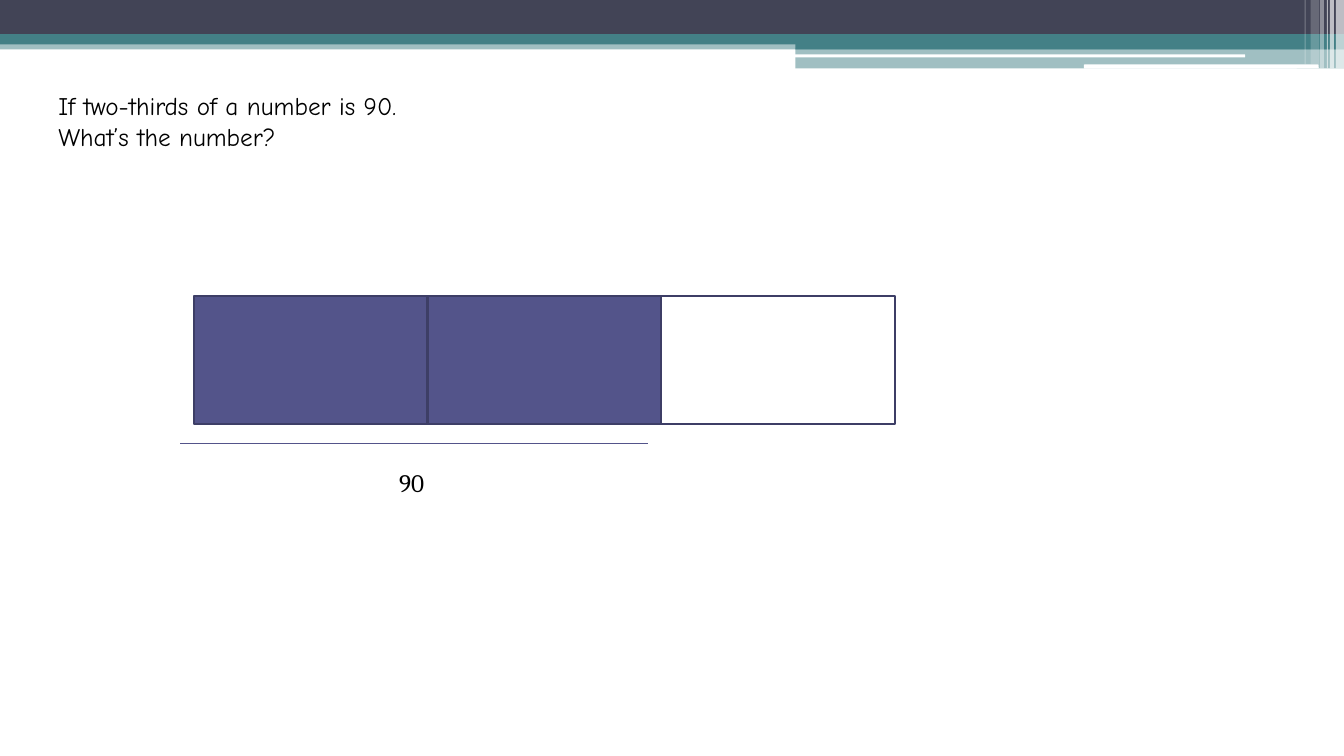
from lxml import etree
from pptx import Presentation
from pptx.dml.color import RGBColor
from pptx.enum import shapes, text
from pptx.oxml import ns
from pptx.util import Inches, Pt

COLORS = {
    "slate": "424456", "teal": "438086", "white": "FFFFFF",
    "indigo": "53548A", "outline": "3D3E66", "black": "000000",
}


def add_block(left, top, width, height, color, opacity=100, rounded=False):
    kind = shapes.MSO_SHAPE.ROUNDED_RECTANGLE if rounded else shapes.MSO_SHAPE.RECTANGLE
    shape = slide.shapes.add_shape(
        kind, Inches(left), Inches(top), Inches(width), Inches(height))
    shape.shadow.inherit = False
    shape.fill.solid()
    shape.fill.fore_color.rgb = RGBColor.from_string(COLORS[color])
    shape.line.fill.background()
    if opacity < 100:
        color_element = shape.fill._xPr.find(".//" + ns.qn("a:srgbClr"))
        etree.SubElement(color_element, ns.qn("a:alpha"), val=str(opacity * 1000))
    return shape


def add_label(left, top, width, height, lines, font_name):
    box = slide.shapes.add_textbox(
        Inches(left), Inches(top), Inches(width), Inches(height))
    frame = box.text_frame
    frame.word_wrap = True
    frame.auto_size = text.MSO_AUTO_SIZE.SHAPE_TO_FIT_TEXT
    paragraph = frame.paragraphs[0]
    for index, line in enumerate(lines):
        if index:
            paragraph.add_line_break()
        run = paragraph.add_run()
        run.text = line
        run.font.size = Pt(18)
        run.font.name = font_name
        run.font.color.rgb = RGBColor.from_string(COLORS["black"])


presentation = Presentation()
presentation.slide_width = Inches(13.33)
presentation.slide_height = Inches(7.5)
slide = presentation.slides.add_slide(presentation.slide_layouts[6])

# Header bands
for band in [
    (0, 0.4, 13.33, 0.09, "teal", 50),
    (0, 0, 13.33, 0.34, "slate"),
    (0, 0.34, 13.33, 0.1, "teal"),
    (7.89, 0.39, 5.44, 0.1, "teal"),
    (7.89, 0.48, 5.44, 0.2, "teal", 50),
]:
    add_block(*band)

# White slits in the right-hand band
for left, top, width, height in [(7.88, 0.54, 4.47, 0.03), (10.75, 0.64, 2.33, 0.04)]:
    add_block(left, top, width, height, "white", rounded=True)

# Translucent stripes at the right edge
for left, width, height, opacity in [
    (13.25, 0.08, 0.68, 65), (13.19, 0.04, 0.68, 65), (13.16, 0.01, 0.68, 60),
    (13.09, 0.04, 0.68, 40), (13, 0.08, 0.64, 20), (12.94, 0.01, 0.64, 30),
]:
    add_block(left, 0, width, height, "white", opacity)

# Question
add_label(0.48, 0.85, 6.67, 0.71,
          ["If two-thirds of a number is 90.", "What’s the number?"], "Comic Neue")

# Bar model: two of three thirds filled
third_width = 2.32
for index, color in enumerate(["indigo", "indigo", "white"]):
    third = add_block(1.92 + index * third_width, 2.94, third_width, 1.27, color)
    third.line.color.rgb = RGBColor.from_string(COLORS["outline"])
    third.line.width = Pt(1.5)

# Line under the two thirds, with its value
span_line = slide.shapes.add_connector(
    shapes.MSO_CONNECTOR.STRAIGHT, Inches(1.79), Inches(4.4), Inches(6.43), Inches(4.4))
span_line.line.color.rgb = RGBColor.from_string(COLORS["indigo"])
span_line.line.width = Pt(0.75)
etree.SubElement(span_line._element.spPr, ns.qn("a:effectLst"))
add_label(3.86, 4.59, 2.57, 0.4, ["90"], "Cambria")

presentation.save("out.pptx")
